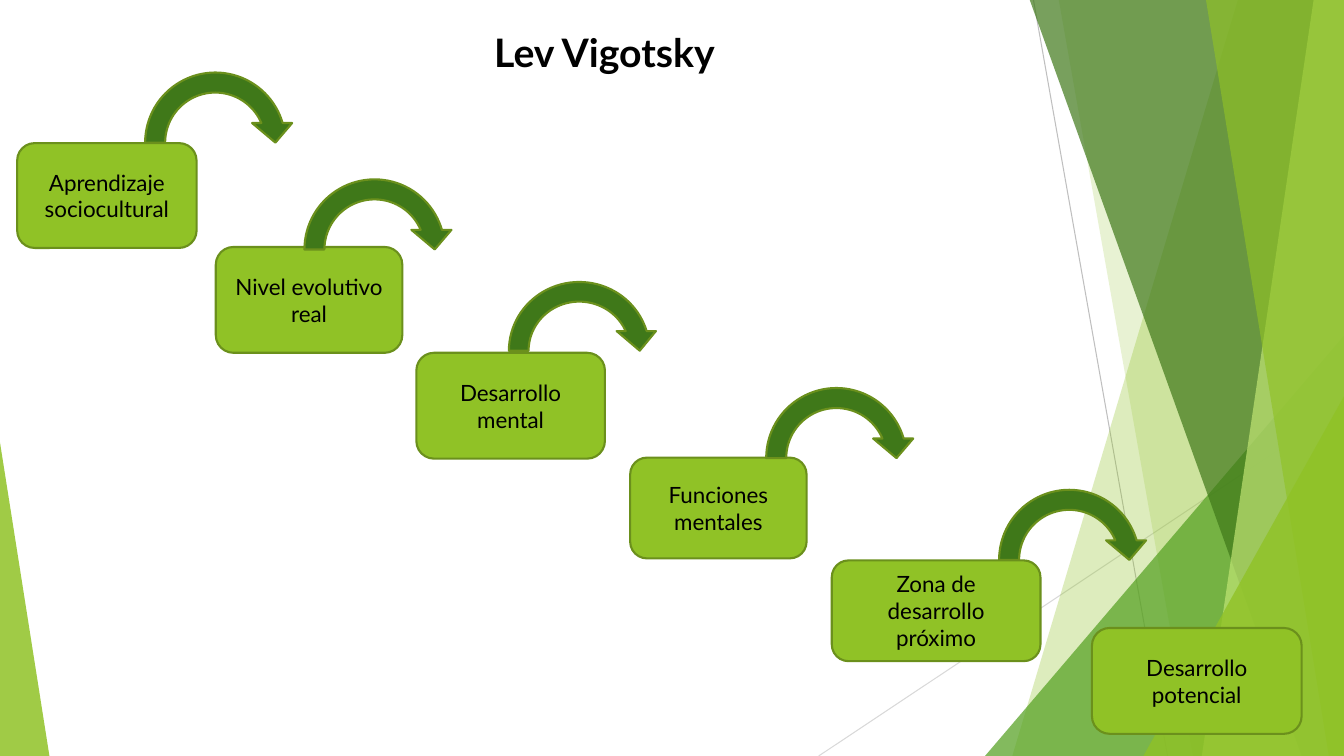
"""Build the Lev Vigotsky slide: a staircase of concepts joined by curved arrows."""
from lxml import etree
from pptx import Presentation
from pptx import util as u
from pptx.dml.color import RGBColor
from pptx.enum import shapes, text
from pptx.oxml.ns import qn

W, H = 13.33, 7.5
TOP = -0.01
FONT = "Lato"
BLACK = RGBColor(0x00, 0x00, 0x00)
LIME = RGBColor(0x90, 0xC2, 0x26)
OLIVE = RGBColor(0x6B, 0x90, 0x1C)
FOREST = RGBColor(0x3F, 0x78, 0x19)
GREEN = RGBColor(0x54, 0xA0, 0x21)
PALE = RGBColor(0xC0, 0xE4, 0x74)
GREY = RGBColor(0xBF, 0xBF, 0xBF)
LIGHT_GREY = RGBColor(0xD9, 0xD9, 0xD9)

TITLE = "Lev Vigotsky"
STEPS = [
    ("Aprendizaje sociocultural", 0.17, 1.42, 1.78, 1.04),
    ("Nivel evolutivo real", 2.14, 2.45, 1.85, 1.05),
    ("Desarrollo mental", 4.13, 3.5, 1.87, 1.05),
    ("Funciones mentales", 6.25, 4.54, 1.75, 1),
    ("Zona de desarrollo próximo", 8.25, 5.56, 2.07, 1),
    ("Desarrollo potencial", 10.83, 6.23, 2.08, 1.05),
]
ARROW_SIZE = 1.59
ARROWS = [(2.92, 1.68, ARROW_SIZE), (4.95, 2.7, 1.56), (7.5, 3.75, ARROW_SIZE),
          (9.81, 4.76, ARROW_SIZE), (1.34, 0.62, ARROW_SIZE)]
RAYS = [((10.25, 0), (11.58, H), GREY), ((W, 4.03), (8.12, H), LIGHT_GREY)]
# Each facet: kind, geometry, colour, opacity in percent.
FACETS = [
    ("band", (12.28, 10.04), LIME, 30),
    ("band", (10.5, 11.83), LIME, 20),
    ("triangle", (9.77, 3.33, 3.56, 1), GREEN, 72),
    ("band", (10.21, 12.91), FOREST, 70),
    ("band", (13.03, 11.92), PALE, 70),
    ("band", (11.96, 13.18), LIME, 65),
    ("triangle", (11.34, 3.93, 1.99, 1), LIME, 80),
    ("triangle", (0, 4.39, 0.49, 0), LIME, 85),
]


def paint(sp, fill, line=None, opacity=100):
    sp.shadow.inherit = False
    sp.fill.solid()
    sp.fill.fore_color.rgb = fill
    if opacity < 100:
        color = sp.fill._xPr.find(qn("a:solidFill"))[0]
        etree.SubElement(color, qn("a:alpha"), val=str(opacity * 1000))
    if line is None:
        sp.line.fill.background()
    else:
        sp.line.color.rgb = line
        sp.line.width = u.Pt(1.5)


def write(sp, content, size=16, bold=False, anchor=text.MSO_ANCHOR.MIDDLE):
    tf = sp.text_frame
    tf.word_wrap = True
    tf.vertical_anchor = anchor
    p = tf.paragraphs[0]
    p.alignment = text.PP_ALIGN.CENTER
    r = p.add_run()
    r.text = content
    r.font.name = FONT
    r.font.size = u.Pt(size)
    r.font.bold = bold
    r.font.color.rgb = BLACK


def add_shape(s, kind, *box):
    return s.shapes.add_shape(kind, *map(u.Inches, box))


def add_ray(s, start, end, color):
    line = s.shapes.add_connector(shapes.MSO_CONNECTOR.STRAIGHT, *map(u.Inches, start + end))
    line.line.color.rgb = color
    line.line.width = u.Pt(0.75)
    etree.SubElement(line._element.spPr, qn("a:effectLst"))


def add_band(s, top_x, bottom_x):
    corners = [(top_x, TOP), (W, TOP), (W, H), (bottom_x, H)]
    points = [(u.Inches(x), u.Inches(y)) for x, y in corners]
    outline = s.shapes.build_freeform(*points[0])
    outline.add_line_segments(points[1:], close=True)
    return outline.convert_to_shape()


def add_triangle(s, left, top, width, apex):
    sp = add_shape(s, shapes.MSO_SHAPE.ISOSCELES_TRIANGLE, left, top, width, H - top)
    sp.adjustments[0] = apex
    return sp


def main():
    prs = Presentation()
    prs.slide_width, prs.slide_height = u.Inches(W), u.Inches(H)
    s = prs.slides.add_slide(prs.slide_layouts[6])
    for ray in RAYS:
        add_ray(s, *ray)
    for kind, geometry, color, opacity in FACETS:
        add = add_band if kind == "band" else add_triangle
        paint(add(s, *geometry), color, opacity=opacity)
    title = s.shapes.add_textbox(*map(u.Inches, (0.17, 0.23, 11.65, 1.83)))
    write(title, TITLE, size=28, bold=True, anchor=text.MSO_ANCHOR.TOP)
    for label, *box in STEPS:
        sp = add_shape(s, shapes.MSO_SHAPE.FLOWCHART_ALTERNATE_PROCESS, *box)
        paint(sp, LIME, OLIVE)
        write(sp, label)
    for left, top, height in ARROWS:
        sp = add_shape(s, shapes.MSO_SHAPE.CIRCULAR_ARROW, left, top, ARROW_SIZE, height)
        paint(sp, FOREST, OLIVE)
    prs.save("out.pptx")


if __name__ == "__main__":
    main()
